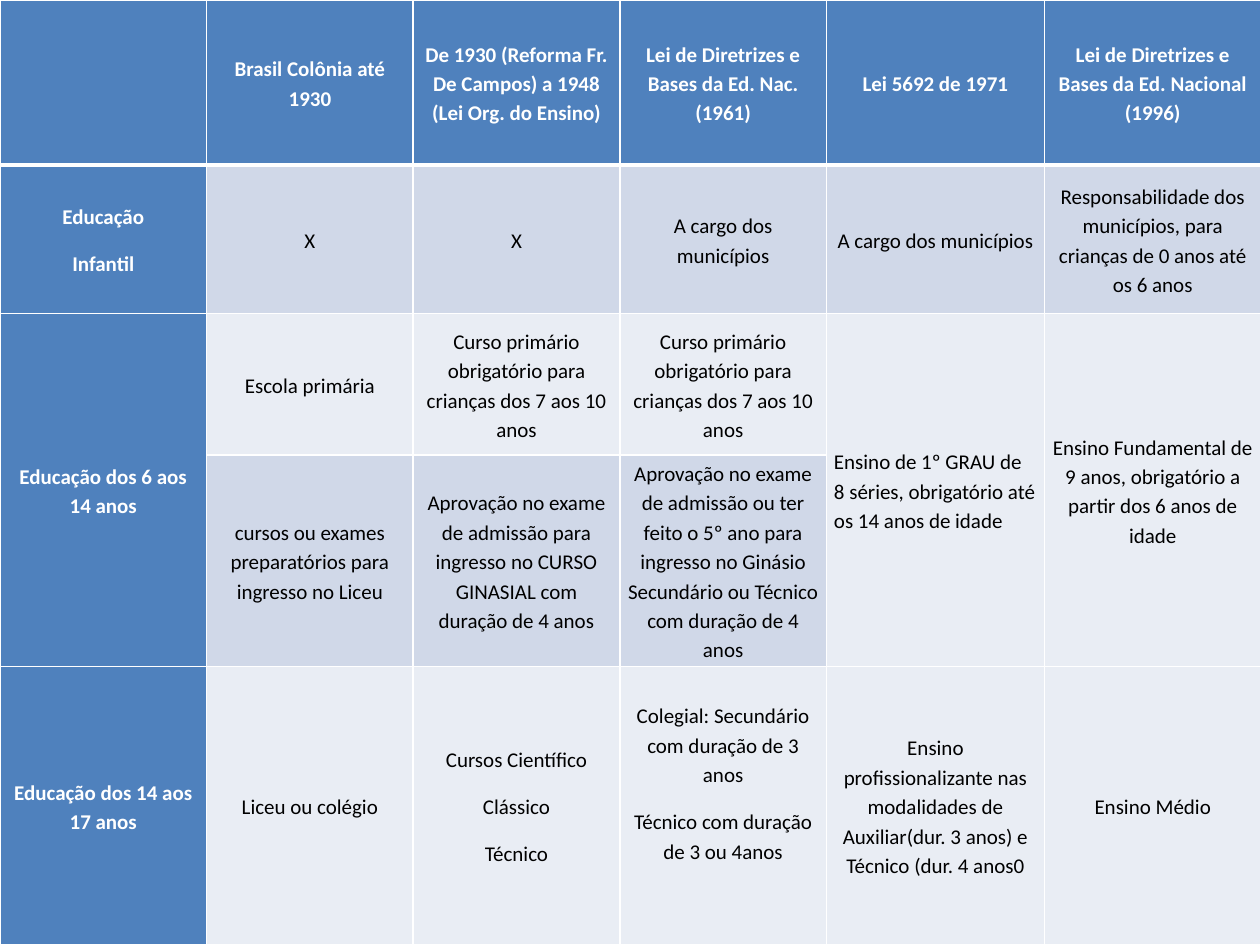
"""Builds a slide with a table comparing the stages of Brazilian schooling across reforms."""
from dataclasses import dataclass

import pptx
import pptx.dml.color
import pptx.enum.text
import pptx.oxml
import pptx.oxml.ns
import pptx.util

Inches, Pt = pptx.util.Inches, pptx.util.Pt
ALIGN = pptx.enum.text.PP_ALIGN
FONT = "Calibri"
COLORS = {"head": "4F81BD", "dark": "D0D8E8", "light": "E9EDF4",
          "text": "000000", "white": "FFFFFF"}
COLS = [1.64, 1.64, 1.64, 1.64, 1.73, 1.72]
ROWS = [1.31, 1.18, 1.12, 1.68, 2.21]
BANDS = ["head", "dark", "light", "dark", "light"]


@dataclass
class Entry:
    text: str = ""
    rows: int = 1
    align: ALIGN = ALIGN.CENTER
    bottom: float = 0


PRIMARY = Entry("Curso primário obrigatório para crianças dos 7 aos 10 anos")
ENTRIES = [
    [Entry(),
     Entry("Brasil Colônia até 1930"),
     Entry("De 1930 (Reforma Fr. De Campos) a 1948 (Lei Org. do Ensino)"),
     Entry("Lei de Diretrizes e Bases da Ed. Nac. (1961)"),
     Entry("Lei 5692 de 1971"),
     Entry("Lei de Diretrizes e Bases da Ed. Nacional (1996)")],
    [Entry("Educação\nInfantil"),
     Entry("X"),
     Entry("X"),
     Entry("A cargo dos municípios"),
     Entry("A cargo dos municípios"),
     Entry("Responsabilidade dos municípios, para crianças de 0 anos até os 6 anos")],
    [Entry("Educação dos 6 aos 14 anos", rows=2),
     Entry("Escola primária"),
     PRIMARY,
     PRIMARY,
     Entry("Ensino de 1º GRAU de 8 séries, obrigatório até os 14 anos de idade",
           rows=2, align=ALIGN.LEFT),
     Entry("Ensino Fundamental de 9 anos, obrigatório a partir dos 6 anos de idade", rows=2)],
    [None,
     Entry("cursos ou exames preparatórios para ingresso no Liceu"),
     Entry("Aprovação no exame de admissão para ingresso no CURSO GINASIAL "
           "com duração de 4 anos"),
     Entry("Aprovação no exame de admissão ou ter feito o 5º ano para ingresso "
           "no Ginásio Secundário ou Técnico com duração de 4 anos"),
     None,
     None],
    [Entry("Educação dos 14 aos 17 anos"),
     Entry("Liceu ou colégio"),
     Entry("Cursos Científico\nClássico\nTécnico"),
     Entry("Colegial: Secundário com duração de 3 anos\nTécnico com duração de 3 ou 4anos",
           bottom=0.37),
     Entry("Ensino profissionalizante nas modalidades de Auxiliar(dur. 3 anos) e "
           "Técnico (dur. 4 anos0"),
     Entry("Ensino Médio")],
]


def rgb(name: str) -> pptx.dml.color.RGBColor:
    """Return a named colour."""
    return pptx.dml.color.RGBColor.from_string(COLORS[name])


def write(tf, text: str, *, color: str, bold: bool, align: ALIGN, size: float = 12) -> None:
    """Write one formatted paragraph for each line of text."""
    for i, line in enumerate(text.split("\n")):
        p = tf.paragraphs[0] if i == 0 else tf.add_paragraph()
        p.alignment, p.line_spacing, p.space_after = align, 1.15, Pt(10)
        if line:
            r = p.add_run()
            r.text = line
            r.font.name, r.font.size, r.font.bold = FONT, Pt(size), bold
            r.font.color.rgb = rgb(color)


def set_borders(cell, **widths: float) -> None:
    """Draw white borders with widths in points, keyed by side."""
    tc_pr = cell._tc.get_or_add_tcPr()
    for i, side in enumerate("LRTB"):
        tc_pr.insert(i, pptx.oxml.parse_xml(
            f'<a:ln{side} {pptx.oxml.ns.nsdecls("a")} w="{Pt(widths[side])}"><a:solidFill>'
            f'<a:srgbClr val="{COLORS["white"]}"/></a:solidFill></a:ln{side}>'))


def fill_cell(table, row: int, col: int, entry: Entry | None) -> None:
    """Format one cell and write its entry, merging it downwards if needed."""
    cell = table.cell(row, col)
    is_head = row == 0 or col == 0
    cell.fill.solid()
    cell.fill.fore_color.rgb = rgb("head" if is_head else BANDS[row])
    set_borders(cell, L=1, R=1, T=3 if row == 1 else 1, B=3 if row == 0 else 1)
    if entry is None:
        return
    if entry.rows > 1:
        cell.merge(table.cell(row + entry.rows - 1, col))
    cell.vertical_anchor = pptx.enum.text.MSO_ANCHOR.MIDDLE
    cell.margin_left = cell.margin_right = Inches(0.06)
    cell.margin_top, cell.margin_bottom = 0, Inches(entry.bottom)
    write(cell.text_frame, entry.text, color="white" if is_head else "text",
          bold=is_head, align=entry.align)


def main() -> None:
    """Build and save the slide."""
    prs = pptx.Presentation()
    prs.slide_width, prs.slide_height = Inches(10), Inches(7.5)
    s = prs.slides.add_slide(prs.slide_layouts[6])
    table = s.shapes.add_table(len(ROWS), len(COLS), 0, 0,
                               Inches(sum(COLS)), Inches(sum(ROWS))).table
    for column, width in zip(table.columns, COLS):
        column.width = Inches(width)
    for table_row, height in zip(table.rows, ROWS):
        table_row.height = Inches(height)
    for row, entries in enumerate(ENTRIES):
        for col, entry in enumerate(entries):
            fill_cell(table, row, col, entry)
    prs.save("out.pptx")


if __name__ == "__main__":
    main()
